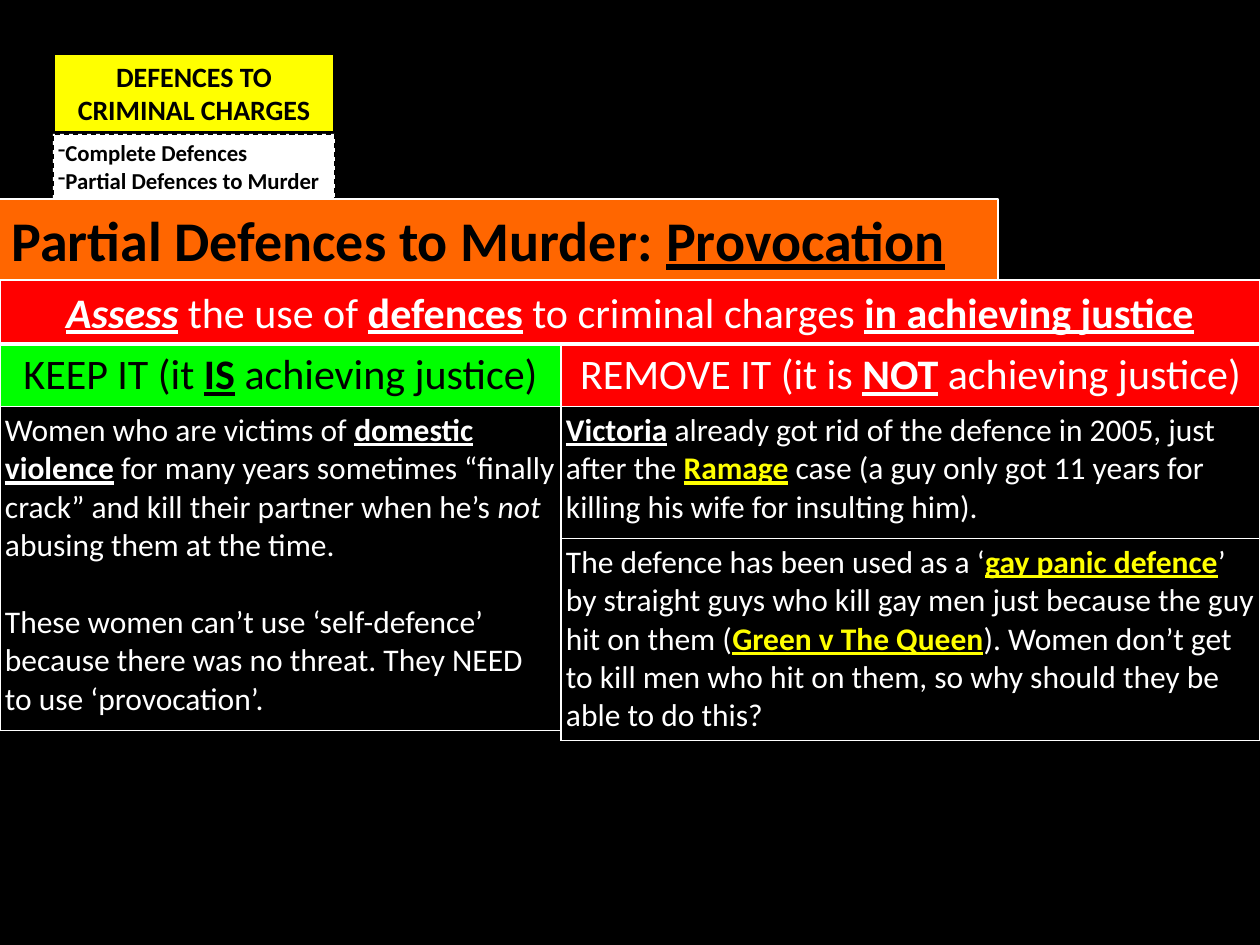
from lxml import etree
from pptx import Presentation
from pptx.dml.color import RGBColor
from pptx.enum.dml import MSO_LINE
from pptx.enum.shapes import MSO_SHAPE
from pptx.enum.text import MSO_ANCHOR, PP_ALIGN
from pptx.oxml import parse_xml
from pptx.oxml.ns import qn
from pptx.util import Emu, Pt

RECT = MSO_SHAPE.RECTANGLE
DASH = MSO_LINE.DASH
TOP = MSO_ANCHOR.TOP
LEFT, CENTER = PP_ALIGN.LEFT, PP_ALIGN.CENTER
A_NS = "http://schemas.openxmlformats.org/drawingml/2006/main"

THEME = {
    "font": "Calibri",
    "black": "000000", "white": "FFFFFF", "yellow": "FFFF00",
    "green": "00FF00", "red": "FF0000", "orange": "FF6600",
    "title": 32, "heading": 24, "body": 18, "label": 16, "list": 13,
    "body_gap": 22,
}
WIDTH, HEIGHT = 1260, 945
TIGHT = 5  # narrow text inset
BOLD = {"bold": True}
KEY = {"bold": True, "underline": True}
CASE = {**KEY, "color": "yellow"}


def px(n):
    return Emu(round(n * 914400 / 126))


def rgb(name):
    return RGBColor.from_string(THEME[name])


def write(tf, paragraphs, size, color, align=LEFT, gap=0, bullet=None):
    """Fill a text frame; a paragraph is a list of (text, format) runs."""
    for i, runs in enumerate(paragraphs):
        p = tf.paragraphs[0] if i == 0 else tf.add_paragraph()
        p.alignment = align
        if i and gap:
            p.space_before = Pt(gap)
        if bullet:
            pPr = p._p.get_or_add_pPr()
            pPr.set("marL", "0")
            pPr.set("indent", "0")
            etree.SubElement(pPr, qn("a:buChar")).set("char", bullet)
        for text, extra in runs:
            r = p.add_run()
            r.text = text
            fmt = {"name": THEME["font"], "size": Pt(THEME[size]), **extra}
            r.font.color.rgb = rgb(fmt.pop("color", color))
            for key, value in fmt.items():
                setattr(r.font, key, value)


def set_insets(target, inset):
    for side in ("left", "right", "top", "bottom"):
        setattr(target, "margin_" + side, px(inset))


def add_box(s, box, fill, line, weight, dash=None, inset=None, wrap=True):
    """Draw a filled rectangle and return its text frame."""
    sp = s.shapes.add_shape(RECT, *map(px, box))
    sp.shadow.inherit = False
    sp.fill.solid()
    sp.fill.fore_color.rgb = rgb(fill)
    sp.line.color.rgb = rgb(line)
    sp.line.width = Pt(weight)
    if dash:
        sp.line.dash_style = dash
    tf = sp.text_frame
    tf.word_wrap = wrap
    tf.vertical_anchor = TOP
    if inset is not None:
        set_insets(tf, inset)
    return tf


def add_borders(cell, color, weight):
    tcPr = cell._tc.get_or_add_tcPr()
    for i, side in enumerate(("lnL", "lnR", "lnT", "lnB")):
        tcPr.insert(i, parse_xml(
            f'<a:{side} xmlns:a="{A_NS}" w="{Pt(weight)}"><a:solidFill>'
            f'<a:srgbClr val="{THEME[color]}"/></a:solidFill></a:{side}>'))


def add_topic(s, x, y, w):
    """Yellow topic label with its dashed list below."""
    label_h, list_h = 80, 65
    tf = add_box(s, (x, y, w, label_h), "yellow", "black", 2)
    write(tf, [[("DEFENCES TO CRIMINAL CHARGES", BOLD)]], "label", "black", CENTER)

    tf = add_box(s, (x, y + label_h + 1, w, list_h), "white", "black", 0.75, DASH, TIGHT)
    write(tf, [[("Complete Defences", BOLD)], [("Partial Defences to Murder", BOLD)]],
          "list", "black", bullet="-")


def add_title(s, box):
    tf = add_box(s, box, "orange", "white", 0.75, wrap=False)
    write(tf, [[("Partial Defences to Murder: ", BOLD), ("Provocation", KEY)]],
          "title", "black")


def add_question(s, box):
    tf = add_box(s, box, "red", "white", 1.5)
    write(tf, [[("Assess", {**KEY, "italic": True}), (" the use of ", {}),
                ("defences", KEY), (" to criminal charges ", {}),
                ("in achieving justice", KEY)]], "heading", "white", CENTER)


def add_argument(s, x, y, w, heights, fill, color, heading, points):
    """One side of the debate: a coloured heading row above its points."""
    frame = s.shapes.add_table(len(heights), 1, *map(px, (x, y, w, sum(heights))))
    table = frame.table
    table.first_row = table.horz_banding = False
    table.columns[0].width = px(w)
    for i, (height, paragraphs) in enumerate(zip(heights, [[heading], *points])):
        table.rows[i].height = px(height)
        cell = table.cell(i, 0)
        set_insets(cell, TIGHT)
        if i == 0:
            cell.fill.solid()
            cell.fill.fore_color.rgb = rgb(fill)
            write(cell.text_frame, paragraphs, "heading", color, CENTER)
        else:
            cell.fill.background()
            write(cell.text_frame, paragraphs, "body", "white", gap=THEME["body_gap"])
        add_borders(cell, "white", 0.75)


KEEP_HEADING = [("KEEP IT (it ", {}), ("IS", KEY), (" achieving justice)", {})]
KEEP_POINTS = [[
    [("Women who are victims of ", {}), ("domestic violence", KEY),
     (" for many years sometimes “finally crack” and kill their partner when he’s ", {}),
     ("not", {"italic": True}), (" abusing them at the time.", {})],
    [("These women can’t use ‘self-defence’ because there was no threat. "
      "They NEED to use ‘provocation’.", {})],
]]
REMOVE_HEADING = [("REMOVE IT (it is ", {}), ("NOT", KEY), (" achieving justice)", {})]
REMOVE_POINTS = [
    [[("Victoria", KEY), (" already got rid of the defence in 2005, just after the ", {}),
      ("Ramage", CASE),
      (" case (a guy only got 11 years for killing his wife for insulting him).", {})]],
    [[("The defence has been used as a ‘", {}), ("gay panic defence", CASE),
      ("’ by straight guys who kill gay men just because the guy hit on them (", {}),
      ("Green v The Queen", CASE),
      ("). Women don’t get to kill men who hit on them, so why should they be "
       "able to do this?", {})]],
]


def main():
    prs = Presentation()
    prs.slide_width, prs.slide_height = px(WIDTH), px(HEIGHT)
    s = prs.slides.add_slide(prs.slide_layouts[6])
    s.background.fill.solid()
    s.background.fill.fore_color.rgb = rgb("black")

    # Debate tables, side by side
    split, top, head_h = 561, 345, 59
    add_argument(s, 0, top, split, (head_h, 324), "green", "black",
                 KEEP_HEADING, KEEP_POINTS)
    add_argument(s, split, top, WIDTH - split, (head_h, 132, 202), "red", "white",
                 REMOVE_HEADING, REMOVE_POINTS)

    # Headings above the debate
    add_topic(s, 53, 53, 282)
    add_title(s, (-1, 199, 999, 81))
    add_question(s, (0, 280, WIDTH, 63))
    prs.save("out.pptx")


if __name__ == "__main__":
    main()
